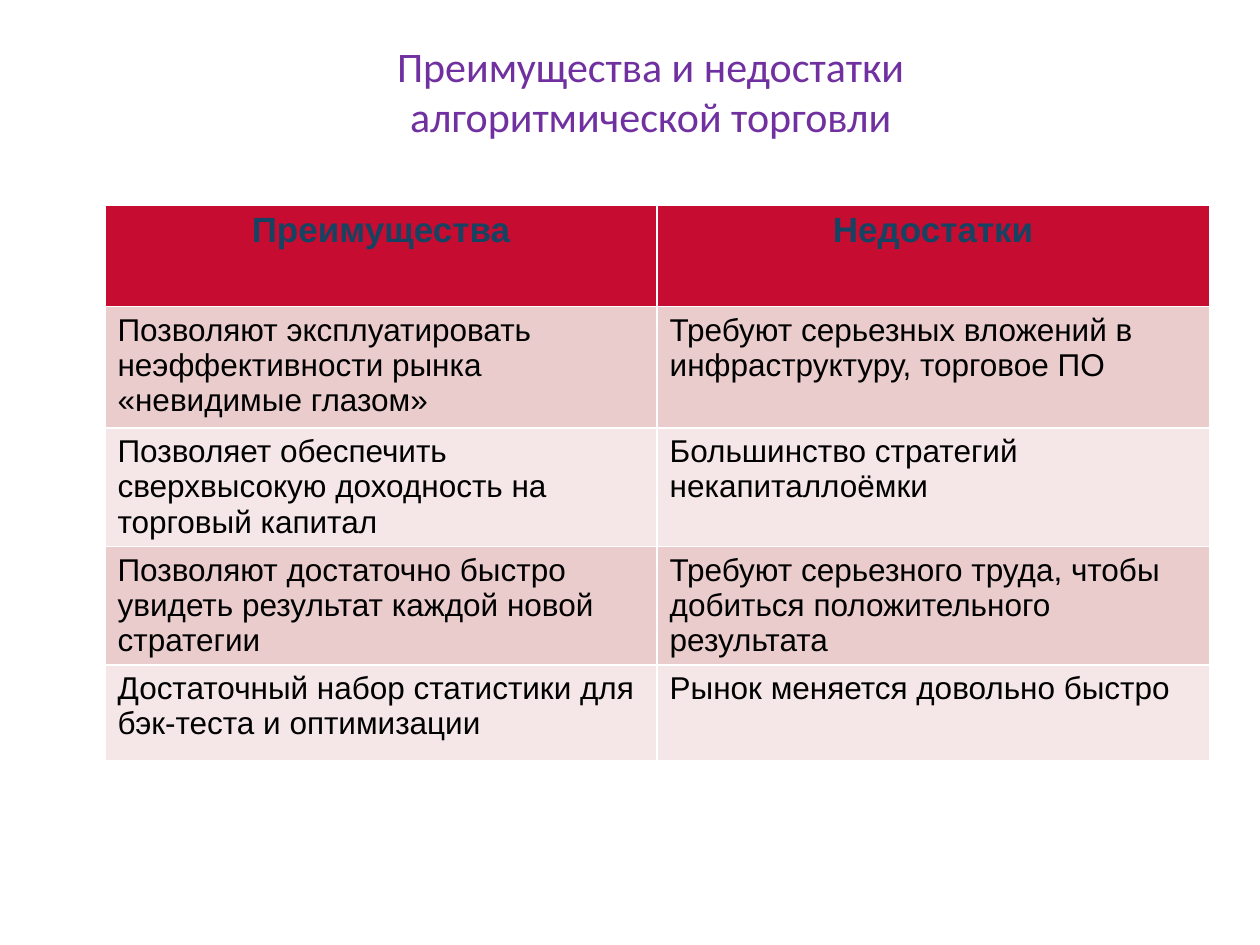
import dataclasses

import pptx
import pptx.dml.color
import pptx.enum.text
import pptx.util

Pt = pptx.util.Pt
RGB = pptx.dml.color.RGBColor.from_string
CENTER = pptx.enum.text.PP_ALIGN.CENTER
LEFT = pptx.enum.text.PP_ALIGN.LEFT


@dataclasses.dataclass(frozen=True)
class Theme:
    title_font: str = "Calibri"
    table_font: str = "Arial"
    title_size: int = 24
    header_size: int = 20
    body_size: int = 18
    title_color: str = "7030A0"
    header_color: str = "174362"
    body_color: str = "000000"
    header_fill: str = "C60C30"
    band_fills: tuple = ("EACCCD", "F5E7E8")


THEME = Theme()
HEADING = "Преимущества и недостатки алгоритмической торговли"
COMPARISON = [
    ("Преимущества", "Недостатки"),
    ("Позволяют эксплуатировать неэффективности рынка «невидимые глазом»",
     "Требуют серьезных вложений в инфраструктуру, торговое ПО"),
    ("Позволяет обеспечить сверхвысокую доходность на торговый капитал",
     "Большинство стратегий некапиталлоёмки"),
    ("Позволяют достаточно быстро увидеть результат каждой новой стратегии",
     "Требуют серьезного труда, чтобы добиться положительного результата"),
    ("Достаточный набор статистики для бэк-теста и оптимизации",
     "Рынок меняется довольно быстро"),
]
ROW_HEIGHTS = (58, 69.5, 67.5, 67.5, 55)


def write(frame, text, font, size, color, align, bold=False):
    paragraph = frame.paragraphs[0]
    paragraph.alignment = align
    run = paragraph.add_run()
    run.text = text
    run.font.name = font
    run.font.size = Pt(size)
    run.font.bold = bold
    run.font.color.rgb = RGB(color)


def place_title(slide, left, top, width, height):
    title = slide.shapes.title
    title.left, title.top = Pt(left), Pt(top)
    title.width, title.height = Pt(width), Pt(height)
    title.text_frame.vertical_anchor = pptx.enum.text.MSO_ANCHOR.MIDDLE
    write(title.text_frame, HEADING, THEME.title_font, THEME.title_size,
          THEME.title_color, CENTER)


def place_comparison(slide, left, top, width, height):
    # The default table style supplies the white rules
    table = slide.shapes.add_table(
        len(COMPARISON), len(COMPARISON[0]),
        Pt(left), Pt(top), Pt(width), Pt(height)).table
    for row, row_height in zip(table.rows, ROW_HEIGHTS):
        row.height = Pt(row_height)

    for i, entries in enumerate(COMPARISON):
        for j, entry in enumerate(entries):
            cell = table.cell(i, j)
            cell.fill.solid()
            if i == 0:  # header row
                cell.fill.fore_color.rgb = RGB(THEME.header_fill)
                write(cell.text_frame, entry, THEME.table_font,
                      THEME.header_size, THEME.header_color, CENTER, True)
            else:  # alternating bands
                cell.fill.fore_color.rgb = RGB(THEME.band_fills[(i - 1) % 2])
                write(cell.text_frame, entry, THEME.table_font,
                      THEME.body_size, THEME.body_color, LEFT)


def main():
    deck = pptx.Presentation()
    deck.slide_width, deck.slide_height = Pt(720), Pt(540)
    slide = deck.slides.add_slide(deck.slide_layouts.get_by_name("Title Only"))
    place_title(slide, 173.5, 17.3, 396.7, 69)
    place_comparison(slide, 60, 117, 631, sum(ROW_HEIGHTS))
    deck.save("out.pptx")


if __name__ == "__main__":
    main()
